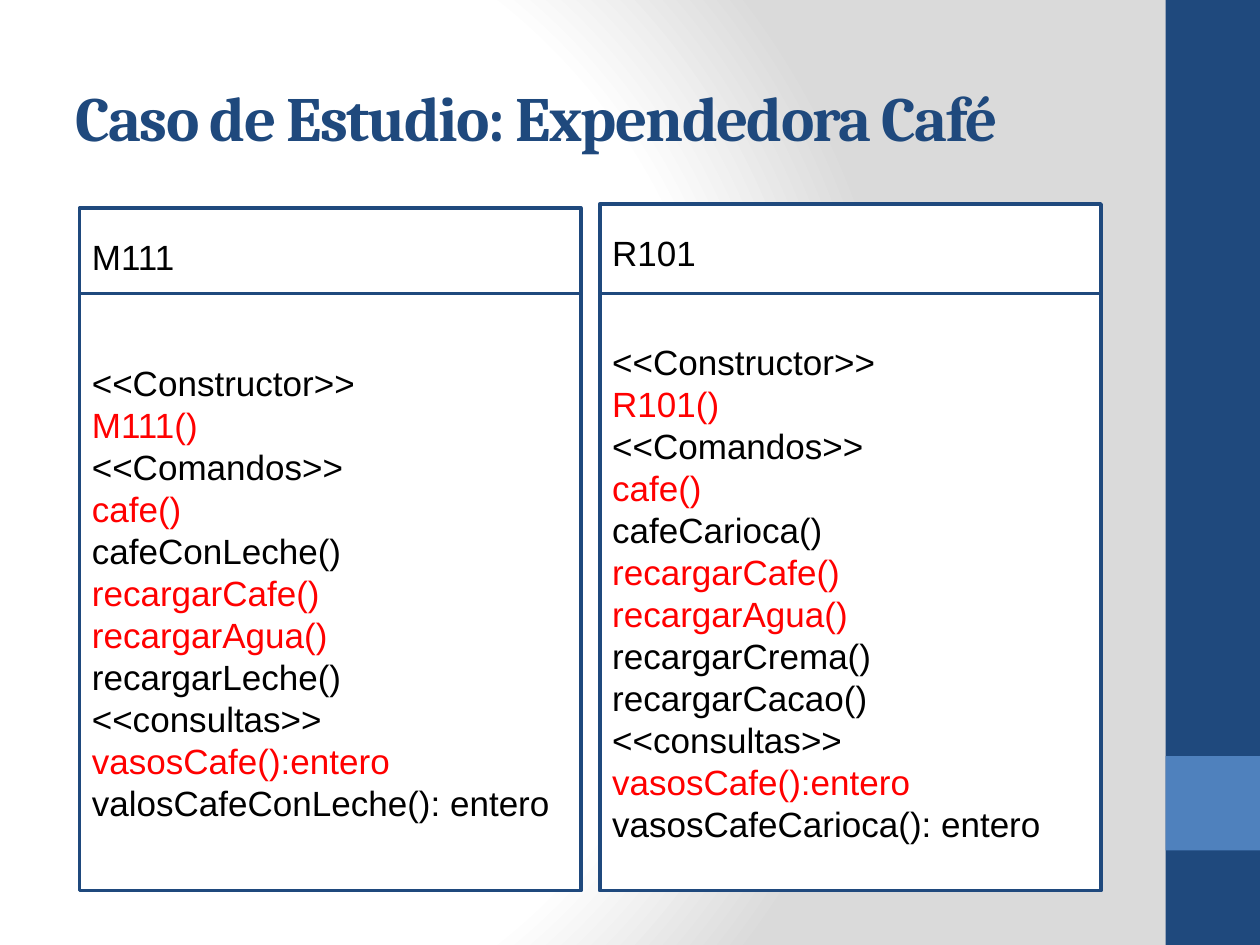
from pptx import Presentation
from pptx.dml.color import RGBColor
from pptx.enum.shapes import MSO_SHAPE
from pptx.enum.text import MSO_ANCHOR, PP_ALIGN
from pptx.oxml import parse_xml
from pptx.oxml.ns import nsdecls
from pptx.util import Pt

NAVY, BLUE, WHITE, BLACK, RED = "1F497D", "4F81BD", "FFFFFF", "000000", "FF0000"
STOPS = [(0, WHITE), (75, WHITE), (100, "DADADA")]
SHARED = {"cafe()", "recargarCafe()", "recargarAgua()", "vasosCafe():entero"}
CLASSES = [
    ("M111", (45.4, 118.8, 286.5, 390.2),
     ["cafeConLeche()"], ["recargarLeche()"], "valosCafeConLeche(): entero"),
    ("R101", (342.7, 116.6, 286.5, 392.4),
     ["cafeCarioca()"], ["recargarCrema()", "recargarCacao()"],
     "vasosCafeCarioca(): entero"),
]
BODY_TOP = 167.8
HEADER_HEIGHT = 55.4


def rgb(color):
    """Turn a hex string into a colour."""
    return RGBColor.from_string(color)


def write(p, text, size=20, font="Arial", color=BLACK, bold=False, spacing=None):
    """Add one formatted run, left aligned, to a paragraph."""
    p.alignment = PP_ALIGN.LEFT
    r = p.add_run()
    r.text = text
    r.font.size, r.font.name, r.font.bold = Pt(size), font, bold
    r.font.color.rgb = rgb(color)
    if spacing is not None:
        r.font._element.set("spc", str(spacing * 100))


def add_box(s, box, fill, line=None):
    """Add a plain rectangle."""
    sp = s.shapes.add_shape(MSO_SHAPE.RECTANGLE, *map(Pt, box))
    sp.shadow.inherit = False
    sp.fill.solid()
    sp.fill.fore_color.rgb = rgb(fill)
    if line:
        sp.line.color.rgb = rgb(line)
        sp.line.width = Pt(2)
    else:
        sp.line.fill.background()
    return sp


def add_background(s):
    """Give the slide its radial gradient."""
    stops = "".join(
        f'<a:gs pos="{pos * 1000}"><a:srgbClr val="{color}"/></a:gs>'
        for pos, color in STOPS)
    s._element.cSld.insert(0, parse_xml(
        f'<p:bg {nsdecls("p", "a")}><p:bgPr><a:gradFill rotWithShape="1">'
        f'<a:gsLst>{stops}</a:gsLst><a:path path="circle">'
        '<a:fillToRect l="20000" t="50000" r="100000" b="50000"/></a:path>'
        '</a:gradFill><a:effectLst/></p:bgPr></p:bg>'))


def add_side_band(s, box):
    """Place the dark band with its light square."""
    left, top, width, height = box
    add_box(s, box, NAVY)
    add_box(s, (left, top + height - 2 * width, width, width), BLUE)


def add_title(s, box, text):
    """Place the title placeholder."""
    sp = s.shapes.title
    sp.left, sp.top, sp.width, sp.height = map(Pt, box)
    tf = sp.text_frame
    tf.vertical_anchor = MSO_ANCHOR.MIDDLE
    write(tf.paragraphs[0], text, size=36, font="Cambria", color=NAVY,
          bold=True, spacing=-1)


def add_lines(s, box, lines, highlighted=()):
    """Place a framed box with one paragraph per line."""
    tf = add_box(s, box, WHITE, NAVY).text_frame
    tf.word_wrap = True
    tf.vertical_anchor = MSO_ANCHOR.MIDDLE
    for i, text in enumerate(lines):
        p = tf.add_paragraph() if i else tf.paragraphs[0]
        write(p, text, color=RED if text in highlighted else BLACK)


def add_class(s, name, box, drinks, refills, query):
    """Place a class diagram: the name above its methods."""
    left, top, width, height = box
    constructor = f"{name}()"
    methods = ["<<Constructor>>", constructor, "<<Comandos>>", "cafe()", *drinks,
               "recargarCafe()", "recargarAgua()", *refills,
               "<<consultas>>", "vasosCafe():entero", query]
    add_lines(s, (left, top, width, HEADER_HEIGHT), [name])
    add_lines(s, (left, BODY_TOP, width, top + height - BODY_TOP), methods,
              SHARED | {constructor})


def main():
    """Build and save the slide."""
    prs = Presentation()
    prs.slide_width, prs.slide_height = Pt(720), Pt(540)
    s = prs.slides.add_slide(prs.slide_layouts[5])
    add_background(s)
    add_side_band(s, (666, 0, 54, 540))
    add_title(s, (36, 21.6, 600, 90), "Caso de Estudio: Expendedora Café")
    for diagram in CLASSES:
        add_class(s, *diagram)
    prs.save("out.pptx")


if __name__ == "__main__":
    main()
